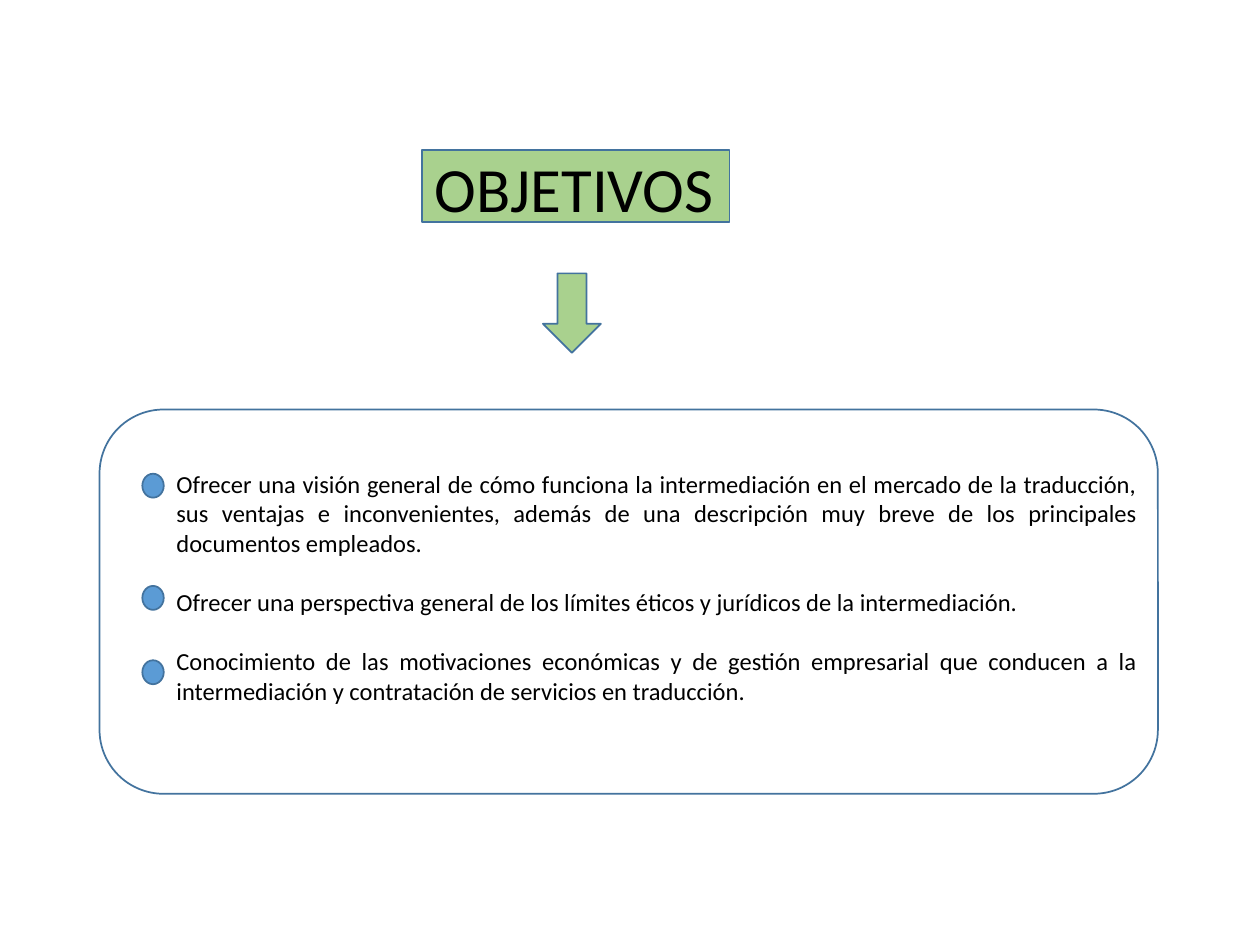
from dataclasses import dataclass

from lxml import etree
from pptx import Presentation
from pptx.dml.color import RGBColor
from pptx.enum.shapes import MSO_SHAPE
from pptx.enum.text import MSO_ANCHOR, MSO_AUTO_SIZE, PP_ALIGN
from pptx.oxml.ns import qn
from pptx.util import Inches, Pt

RECTANGLE = MSO_SHAPE.RECTANGLE
ROUNDED = MSO_SHAPE.ROUNDED_RECTANGLE
DOWN_ARROW = MSO_SHAPE.DOWN_ARROW
OVAL = MSO_SHAPE.OVAL
LEFT = PP_ALIGN.LEFT
JUSTIFY = PP_ALIGN.JUSTIFY
TOP = MSO_ANCHOR.TOP
FIXED_SIZE = MSO_AUTO_SIZE.NONE


@dataclass(frozen=True)
class Theme:
    font: str = "Calibri"
    title_size: int = 36
    body_size: int = 14
    paragraph_gap: float = 17.1
    line_width: int = 1
    text: str = "000000"
    outline: str = "43739E"
    panel: str = "FFFFFF"
    accent: str = "A9D18E"
    marker: str = "5B9BD5"


THEME = Theme()

TITLE = "OBJETIVOS"
OBJECTIVES = [
    "Ofrecer una visión general de cómo funciona la intermediación en el mercado de la "
    "traducción, sus ventajas e inconvenientes, además de una descripción muy breve de los "
    "principales documentos empleados.",
    "Ofrecer una perspectiva general de los límites éticos y jurídicos de la intermediación.",
    "Conocimiento de las motivaciones económicas y de gestión empresarial que conducen a la "
    "intermediación y contratación de servicios en traducción.",
]
MARKER_OFFSETS = [0.51, 1.4, 1.99]


def add_outlined_shape(page, kind, box, fill):
    shape = page.shapes.add_shape(kind, *map(Inches, box))
    shape.shadow.inherit = False
    shape.fill.solid()
    shape.fill.fore_color.rgb = RGBColor.from_string(fill)
    shape.line.color.rgb = RGBColor.from_string(THEME.outline)
    shape.line.width = Pt(THEME.line_width)
    return shape


def place_on_top(page, placeholder, box, wrap):
    placeholder.left, placeholder.top, placeholder.width, placeholder.height = map(Inches, box)
    frame = placeholder.text_frame
    frame.word_wrap = wrap
    frame.auto_size = FIXED_SIZE
    frame.vertical_anchor = TOP
    page.shapes._spTree.append(placeholder._element)
    return frame


def write_paragraph(para, text, size, alignment):
    para.alignment = alignment
    para.space_before = Pt(0)
    span = para.add_run()
    span.text = text
    span.font.name = THEME.font
    span.font.size = Pt(size)
    span.font.color.rgb = RGBColor.from_string(THEME.text)


def remove_bullet(para):
    properties = para._p.get_or_add_pPr()
    properties.set("marL", "0")
    properties.set("indent", "0")
    etree.SubElement(properties, qn("a:buNone"))


def build_heading(page, box):
    left, top, width, height = box
    add_outlined_shape(page, RECTANGLE, box, THEME.accent)
    frame = place_on_top(page, page.shapes.title, (left, top - 0.05, width, height + 0.14), False)
    write_paragraph(frame.paragraphs[0], TITLE, THEME.title_size, LEFT)


def build_arrow(page, box):
    add_outlined_shape(page, DOWN_ARROW, box, THEME.accent)


def build_objectives(page, box):
    left, top, width, height = box
    add_outlined_shape(page, ROUNDED, box, THEME.panel)
    text_box = (left + 0.51, top + 0.42, width - 0.57, height - 0.83)
    frame = place_on_top(page, page.placeholders[1], text_box, True)
    for index, objective in enumerate(OBJECTIVES):
        para = frame.add_paragraph() if index else frame.paragraphs[0]
        write_paragraph(para, objective, THEME.body_size, JUSTIFY)
        para.space_after = Pt(THEME.paragraph_gap)
        remove_bullet(para)
    for offset in MARKER_OFFSETS:
        add_outlined_shape(page, OVAL, (left + 0.34, top + offset, 0.17, 0.19), THEME.marker)


def main():
    deck = Presentation()
    deck.slide_width, deck.slide_height = Inches(10), Inches(7.5)
    page = deck.slides.add_slide(deck.slide_layouts[1])
    build_objectives(page, (0.79, 3.25, 8.4, 3.05))
    build_heading(page, (3.35, 1.19, 2.44, 0.57))
    build_arrow(page, (4.31, 2.17, 0.46, 0.63))
    deck.save("out.pptx")


if __name__ == "__main__":
    main()
